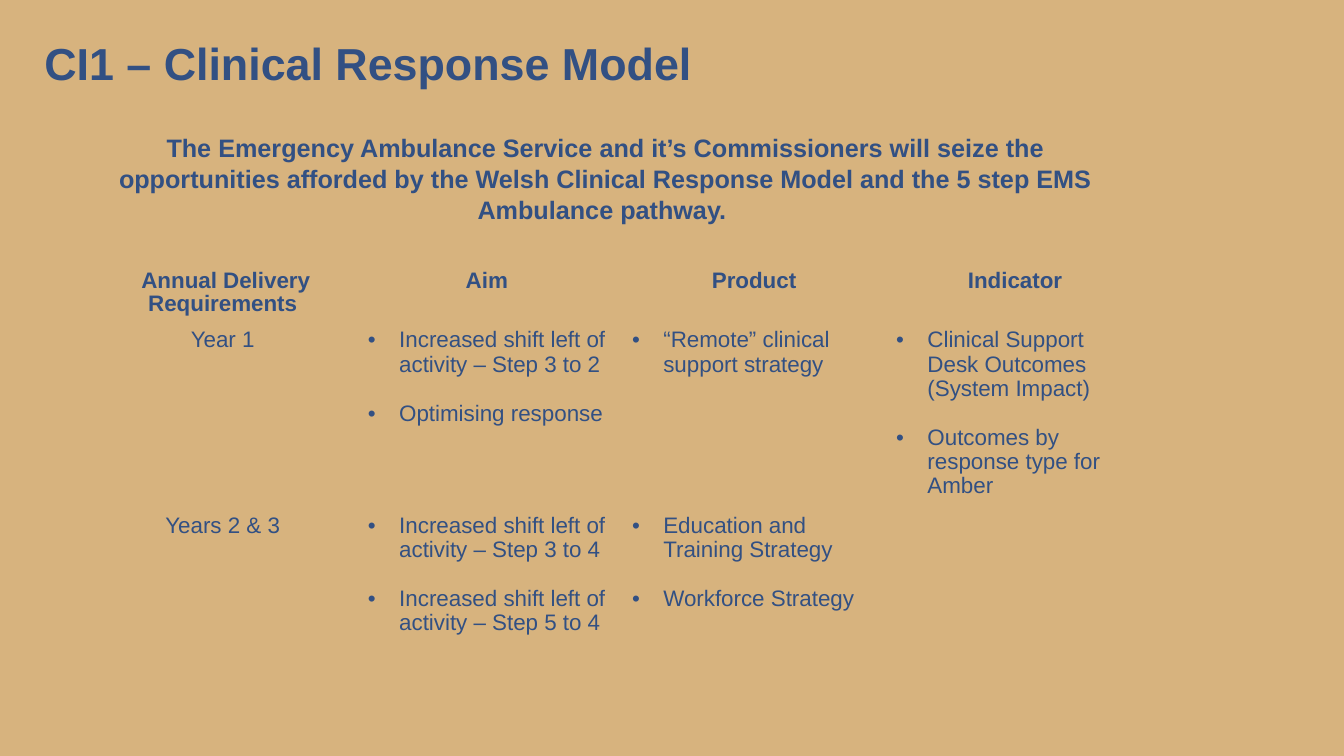
from lxml import etree
from pptx import Presentation
from pptx.dml.color import RGBColor
from pptx.enum.text import MSO_ANCHOR, MSO_AUTO_SIZE, PP_ALIGN
from pptx.oxml.ns import qn
from pptx.util import Inches, Pt

LEFT, CENTER = PP_ALIGN.LEFT, PP_ALIGN.CENTER
MIDDLE, NO_FIT = MSO_ANCHOR.MIDDLE, MSO_AUTO_SIZE.NONE
SAND, NAVY = "D7B37E", "325083"
COL_W = 2.62
ROW_HEIGHTS = [0.59, 1.84, 1.33]
HEADERS = ["Annual Delivery Requirements ", "Aim ", "Product", "Indicator "]
YEARS = [
    ("Year 1 ",
     ["Increased shift left of activity – Step 3 to 2", "Optimising response"],
     ["“Remote” clinical support strategy"],
     ["Clinical Support Desk Outcomes (System Impact)",
      "Outcomes by response type for Amber"]),
    ("Years 2 & 3 ",
     ["Increased shift left of activity – Step 3 to 4",
      "Increased shift left of activity – Step 5 to 4"],
     ["Education and Training Strategy", "Workforce Strategy"],
     []),
]


def color(value):
    return RGBColor.from_string(value)


def paint(fill, value):
    fill.solid()
    fill.fore_color.rgb = color(value)


def indent(p, left, first=0, bullet=None):
    pPr = p._p.get_or_add_pPr()
    pPr.set("marL", str(Inches(left)))
    pPr.set("indent", str(Inches(first)))
    if bullet:
        etree.SubElement(pPr, qn("a:buFont")).set("typeface", "Arial")
        etree.SubElement(pPr, qn("a:buChar")).set("char", bullet)


def write(p, text, size=16, bold=False, align=LEFT, spacing=0.97, before=0):
    p.alignment = align
    p.line_spacing = spacing
    p.space_before = Pt(before)
    r = p.add_run()
    r.text = text
    r.font.name = "Arial"
    r.font.size = Pt(size)
    r.font.bold = bold
    r.font.color.rgb = color(NAVY)


def border(cell, bottom):
    tcPr = cell._tc.get_or_add_tcPr()
    for i, (side, width) in enumerate(
            [("lnL", 1), ("lnR", 1), ("lnT", 1), ("lnB", bottom)]):
        ln = etree.Element(qn("a:" + side), w=str(Pt(width)))
        fill = etree.SubElement(ln, qn("a:solidFill"))
        etree.SubElement(fill, qn("a:srgbClr")).set("val", SAND)
        tcPr.insert(i, ln)


def add_title(s, text):
    sp = s.shapes.title
    sp.left, sp.top, sp.width, sp.height = map(Inches, (0.34, 0.19, 10.48, 0.8))
    paint(sp.fill, SAND)
    tf = sp.text_frame
    tf.auto_size = NO_FIT
    tf.vertical_anchor = MIDDLE
    write(tf.paragraphs[0], text, size=32, bold=True, spacing=Pt(43))


def add_statement(s, text):
    sp = s.shapes.add_textbox(0, Inches(1.25), Inches(11.01), Inches(1.01))
    tf = sp.text_frame
    tf.word_wrap = True
    p = tf.paragraphs[0]
    indent(p, 1)
    write(p, text, size=18, bold=True, align=CENTER, spacing=1.03)


def add_bullets(cell, items):
    tf = cell.text_frame
    for i, item in enumerate(items):
        p = tf.add_paragraph() if i else tf.paragraphs[0]
        indent(p, 0.31, -0.31, "•")
        write(p, item, before=18 if i else 0)


def add_plan(s):
    rows, cols = len(ROW_HEIGHTS), len(HEADERS)
    table = s.shapes.add_table(rows, cols, Inches(0.93), Inches(2.62),
                               Inches(COL_W * cols),
                               Inches(sum(ROW_HEIGHTS))).table
    table.horz_banding = False
    for col in table.columns:
        col.width = Inches(COL_W)
    for r, height in enumerate(ROW_HEIGHTS):
        table.rows[r].height = Inches(height)
        for c in range(cols):
            cell = table.cell(r, c)
            paint(cell.fill, SAND)
            border(cell, 1 if r else 3)
    for c, header in enumerate(HEADERS):
        write(table.cell(0, c).text_frame.paragraphs[0], header,
              bold=True, align=CENTER, spacing=0.95)
    for r, (year, *lists) in enumerate(YEARS, 1):
        write(table.cell(r, 0).text_frame.paragraphs[0], year, align=CENTER)
        for c, items in enumerate(lists, 1):
            add_bullets(table.cell(r, c), items)


def main():
    prs = Presentation()
    prs.slide_width, prs.slide_height = Inches(13.33), Inches(7.5)
    s = prs.slides.add_slide(prs.slide_layouts[5])
    paint(s.background.fill, SAND)
    add_title(s, "CI1 – Clinical Response Model")
    add_plan(s)
    add_statement(s, "The Emergency Ambulance Service and it’s Commissioners will "
                     "seize the opportunities afforded by the Welsh Clinical "
                     "Response Model and the 5 step EMS Ambulance pathway. ")
    prs.save("out.pptx")


if __name__ == "__main__":
    main()
